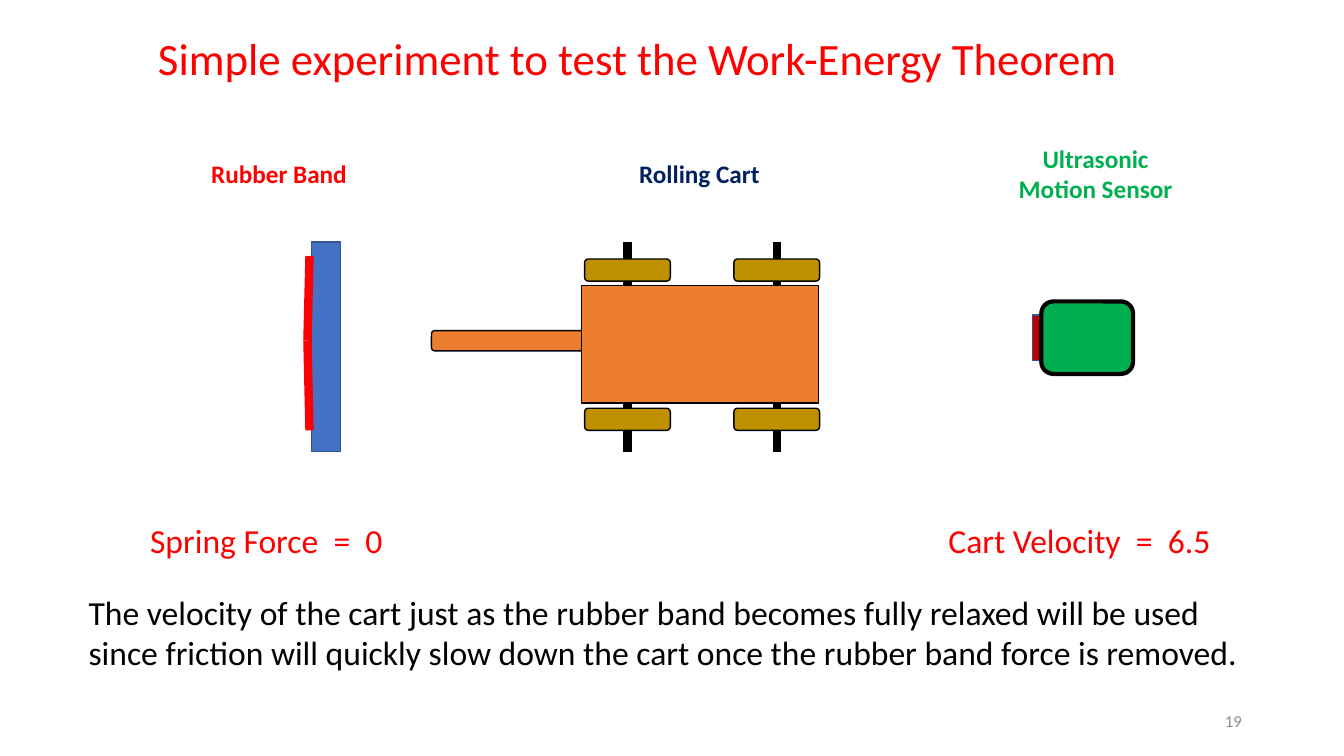
from dataclasses import dataclass

import pptx
import pptx.dml.color
import pptx.enum.shapes
import pptx.enum.text
import pptx.oxml
import pptx.oxml.ns
import pptx.util

Pt = pptx.util.Pt
Shapes = pptx.enum.shapes.MSO_SHAPE
Align = pptx.enum.text.PP_ALIGN
Anchor = pptx.enum.text.MSO_ANCHOR


@dataclass(frozen=True)
class Theme:
    font: str = "Calibri"
    title_size: int = 32
    body_size: int = 24
    label_size: int = 18
    number_size: int = 12
    red: str = "FF0000"
    navy: str = "002060"
    green: str = "00B050"
    black: str = "000000"
    grey: str = "8C8C8C"
    orange: str = "ED7D31"
    gold: str = "BF9000"
    dark_red: str = "C00000"
    blue: str = "4472C4"
    dark_blue: str = "325491"


THEME = Theme()


def rgb(value):
    return pptx.dml.color.RGBColor.from_string(value)


def add_part(shapes, kind, box, fill, line=THEME.black, weight=1):
    shape = shapes.add_shape(kind, *map(Pt, box))
    shape.shadow.inherit = False
    shape.fill.solid()
    shape.fill.fore_color.rgb = rgb(fill)
    shape.line.color.rgb = rgb(line)
    shape.line.width = Pt(weight)


def add_line(shapes, start, end, color, weight=6):
    connector = shapes.add_connector(
        pptx.enum.shapes.MSO_CONNECTOR.STRAIGHT, *map(Pt, (*start, *end)))
    connector.line.color.rgb = rgb(color)
    connector.line.width = Pt(weight)
    properties = connector._element.spPr
    properties.append(properties.makeelement(pptx.oxml.ns.qn("a:effectLst"), {}))


def add_text(shapes, box, text, size, color, bold=False,
             align=Align.LEFT, anchor=Anchor.TOP):
    frame = shapes.add_textbox(*map(Pt, box)).text_frame
    frame.word_wrap = True
    frame.vertical_anchor = anchor
    paragraph = frame.paragraphs[0]
    paragraph.alignment = align
    run = paragraph.add_run()
    run.text = text
    run.font.color.rgb = rgb(color)
    formats = {"name": THEME.font, "size": Pt(size), "bold": bold}
    for name, value in formats.items():
        setattr(run.font, name, value)


def draw_cart(shapes, box):
    """Cart seen from above, with its push rod pointing left."""
    left, top, width, height = box
    cart = shapes.add_group_shape().shapes
    body_left, body_top, body_height = left + 107.3, top + 31, 84.2
    wheel_width, wheel_height = 61.2, 15.8
    wheel_lefts = (left + 109.4, left + width - wheel_width)
    wheel_tops = (top + 12.2, top + 118.8)

    add_part(cart, Shapes.ROUNDED_RECTANGLE, (left, top + 63.4, 119.5, 14.4), THEME.orange)
    for wheel_left in wheel_lefts:
        axle = wheel_left + wheel_width / 2
        add_line(cart, (axle, top), (axle, top + height), THEME.black)
    add_part(cart, Shapes.RECTANGLE, (body_left, body_top, 169.2, body_height), THEME.orange)
    for wheel_left in wheel_lefts:
        for wheel_top in wheel_tops:
            add_part(cart, Shapes.ROUNDED_RECTANGLE,
                     (wheel_left, wheel_top, wheel_width, wheel_height), THEME.gold)


def draw_sensor(shapes, box):
    left, top, width, height = box
    sensor = shapes.add_group_shape().shapes
    lens_width, lens_height = 6.5, 32.4
    add_part(sensor, Shapes.RECTANGLE,
             (left, top + (height - lens_height) / 2, lens_width, lens_height),
             THEME.dark_red, THEME.dark_blue)
    add_part(sensor, Shapes.ROUNDED_RECTANGLE,
             (left + lens_width, top, width - lens_width, height), THEME.green, weight=3)


def draw_rubber_band(shapes, box):
    """Post with the relaxed band along its left side."""
    left, top, width, height = box
    add_part(shapes, Shapes.RECTANGLE, box, THEME.blue, THEME.dark_blue)
    for end in (top + 10.1, top + height - 15.2):
        add_line(shapes, (left - 1.4, end), (left - 2.9, top + 70.6), THEME.red)


def draw_labels(shapes, box):
    """Names of the three parts, each centred on one middle line."""
    left, top, width, height = box
    middle = top + height / 2
    labels = (
        (left, 28.8, "Rubber Band", THEME.red),
        (left + 300.2, 28.8, "Rolling Cart", THEME.navy),
        (left + width - 144, 51.1, "Ultrasonic Motion Sensor", THEME.green),
    )
    for label_left, label_height, text, color in labels:
        add_text(shapes, (label_left, middle - label_height / 2, 144, label_height),
                 text, THEME.label_size, color, True, Align.CENTER)


def draw_readings(shapes, box):
    left, top, width, height = box
    reading_width = 212.4
    readings = ((left, "Spring Force  =  0"),
                (left + width - reading_width, "Cart Velocity  =  6.5"))
    for reading_left, text in readings:
        add_text(shapes, (reading_left, top, reading_width, height),
                 text, THEME.body_size, THEME.red)


def draw_experiment_slide(presentation):
    shapes = presentation.slides.add_slide(presentation.slide_layouts[6]).shapes
    draw_cart(shapes, (308.2, 172.8, 277.2, 149.8))
    draw_sensor(shapes, (737.3, 215.3, 72, 51.8))
    draw_rubber_band(shapes, (222.5, 172.8, 20.9, 149.8))
    draw_labels(shapes, (127.4, 98.6, 727.2, 51.1))
    draw_readings(shapes, (100.1, 367.9, 782.6, 36))
    add_text(shapes, (105.8, 18.7, 748.8, 46.1),
             "Simple experiment to test the Work-Energy Theorem",
             THEME.title_size, THEME.red)
    add_text(shapes, (56.2, 419, 838.1, 65.5),
             "The velocity of the cart just as the rubber band becomes fully relaxed "
             "will be used since friction will quickly slow down the cart once the "
             "rubber band force is removed.",
             THEME.body_size, THEME.black)
    add_text(shapes, (678.2, 500.4, 216, 28.8), "19", THEME.number_size, THEME.grey,
             align=Align.RIGHT, anchor=Anchor.MIDDLE)


def main():
    presentation = pptx.Presentation()
    presentation.slide_width = Pt(960)
    presentation.slide_height = Pt(540)
    draw_experiment_slide(presentation)
    presentation.save("out.pptx")


if __name__ == "__main__":
    main()
